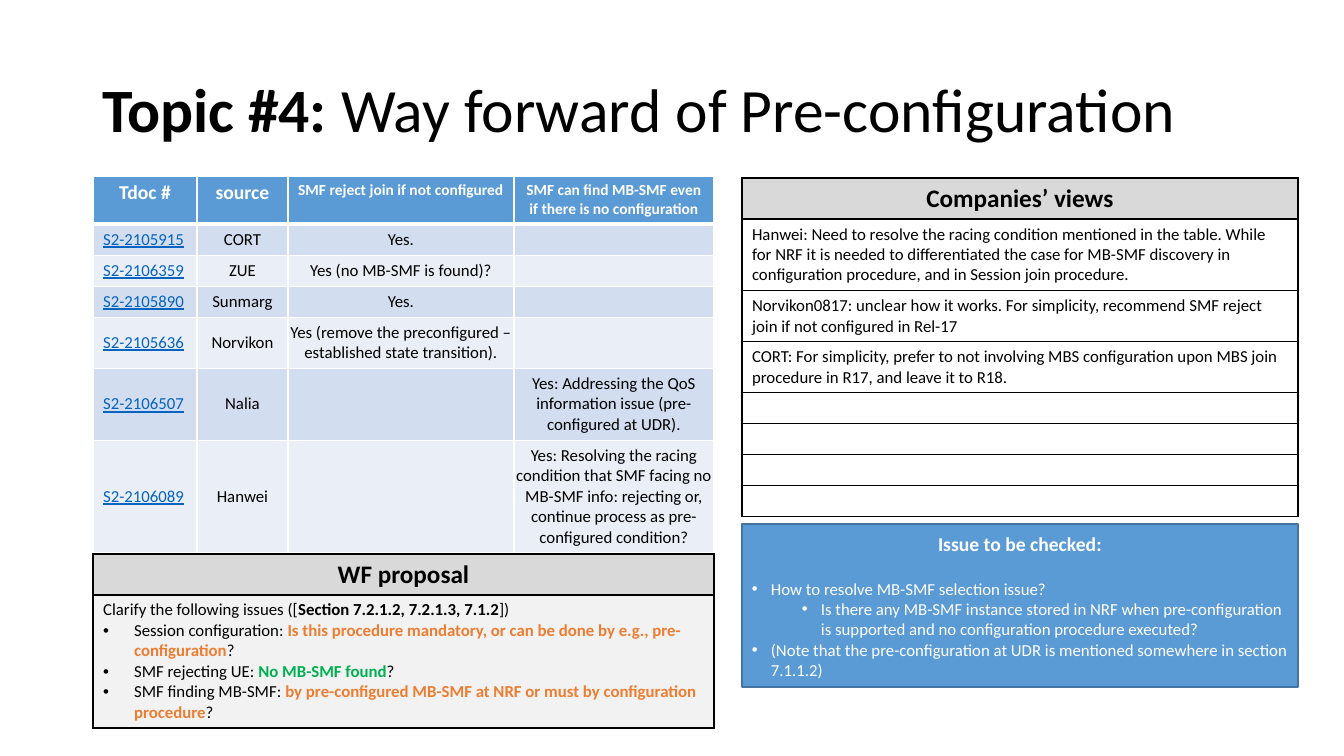
"""Build the slide on the way forward for pre-configuration."""
from lxml.etree import SubElement
from pptx import Presentation
from pptx.dml.color import RGBColor
from pptx.enum.shapes import MSO_SHAPE
from pptx.enum.text import MSO_ANCHOR as ANCHOR, PP_ALIGN as ALIGN
from pptx.oxml.ns import qn
from pptx.util import Pt

PX = 9072
rgb = RGBColor.from_string
BLUE, GREY, BLACK, WHITE = "5B9BD5", "D9D9D9", "000000", "FFFFFF"
ORANGE, GREEN, LINK = "ED7D31", "00B050", "0563C1"


def write(tf, *parts, size=12, color=BLACK, bold=False, underline=None,
          align=ALIGN.LEFT, indent=0, hang=0):
    """Add a paragraph; a part is a string or (string, colour, bold)."""
    p = tf.add_paragraph() if tf.text else tf.paragraphs[0]
    p.alignment = align
    if indent:
        pPr = p._p.get_or_add_pPr()
        pPr.set("marL", str(indent * PX))
        pPr.set("indent", str(-hang * PX))
        SubElement(pPr, qn("a:buFont")).set("typeface", "Arial")
        SubElement(pPr, qn("a:buChar")).set("char", "•")
    for part in parts:
        text, hue, heavy = (part, color, bold) if isinstance(part, str) else part
        r = p.add_run()
        r.text = text
        r.font.name, r.font.size = "Calibri", Pt(size)
        r.font.bold, r.font.underline = heavy, underline
        r.font.color.rgb = rgb(hue)
    return p


def draw_table(left, top, widths, heights, edge):
    """Add an unfilled table with ruled cells."""
    table = s.shapes.add_table(len(heights), len(widths), left * PX, top * PX,
                               sum(widths) * PX, sum(heights) * PX).table
    table.horz_banding = False
    for col, width in zip(table.columns, widths):
        col.width = width * PX
    for row, height in zip(table.rows, heights):
        row.height = height * PX
    for cell in table.iter_cells():
        tcPr = cell._tc.get_or_add_tcPr()
        for side in ("lnL", "lnR", "lnT", "lnB"):
            ln = SubElement(tcPr, qn(f"a:{side}"), w=str(Pt(1)))
            fill = SubElement(ln, qn("a:solidFill"))
            SubElement(fill, qn("a:srgbClr"), val=edge)
        cell.fill.background()
        cell.text_frame.paragraphs[0]._p.get_or_add_endParaRPr().set("sz", "1200")
    return table


prs = Presentation()
prs.slide_width, prs.slide_height = 1344 * PX, 756 * PX
s = prs.slides.add_slide(prs.slide_layouts[5])

title = s.shapes.title
title.left, title.top, title.width, title.height = 92 * PX, 40 * PX, 1159 * PX, 146 * PX
title.text_frame.vertical_anchor = ANCHOR.MIDDLE
p = write(title.text_frame, ("Topic #4: ", BLACK, True),
          "Way forward of Pre-configuration", size=44)
p.line_spacing = 0.9

headings = [("Tdoc #", 14), ("source", 14), ("SMF reject join if not configured", 11),
            ("SMF can find MB-SMF even if there is no configuration", 11)]
tdocs = [
    ("S2-2105915", "CORT", "Yes.", ""),
    ("S2-2106359", "ZUE", "Yes (no MB-SMF is found)?", ""),
    ("S2-2105890", "Sunmarg", "Yes.", ""),
    ("S2-2105636", "Norvikon",
     "Yes (remove the preconfigured – established state transition).", ""),
    ("S2-2106507", "Nalia", "",
     "Yes: Addressing the QoS information issue (pre-configured at UDR)."),
    ("S2-2106089", "Hanwei", "",
     "Yes: Resolving the racing condition that SMF facing no MB-SMF info: "
     "rejecting or, continue process as pre-configured condition?"),
]
table = draw_table(93, 176, [104, 91, 226, 200], [47, 31, 31, 31, 50, 72, 112], WHITE)
for c, (text, size) in enumerate(headings):
    cell = table.cell(0, c)
    cell.fill.solid()
    cell.fill.fore_color.rgb = rgb(BLUE)
    cell._tc.tcPr.find(qn("a:lnB")).set("w", str(Pt(3)))
    table.cell(1, c)._tc.tcPr.find(qn("a:lnT")).set("w", str(Pt(3)))
    write(cell.text_frame, text, size=size, color=WHITE, bold=True, align=ALIGN.CENTER)
for i, tdoc in enumerate(tdocs, 1):
    for c, text in enumerate(tdoc):
        cell = table.cell(i, c)
        cell.fill.solid()
        cell.fill.fore_color.rgb = rgb("D2DEEF" if i % 2 else "EAEFF7")
        cell.vertical_anchor = ANCHOR.MIDDLE
        if c:
            cell.margin_left = cell.margin_right = PX if c == 1 else 0
        if c == 1:
            cell.margin_top = cell.margin_bottom = PX
        if c == 0:
            write(cell.text_frame, text, color=LINK, underline=True)
        elif text:
            write(cell.text_frame, text, align=ALIGN.CENTER)

views = [
    "Hanwei: Need to resolve the racing condition mentioned in the table. While for NRF "
    "it is needed to differentiated the case for MB-SMF discovery in configuration "
    "procedure, and in Session join procedure.",
    "Norvikon0817: unclear how it works. For simplicity, recommend SMF reject join if "
    "not configured in Rel-17",
    "CORT: For simplicity, prefer to not involving MBS configuration upon MBS join "
    "procedure in R17, and leave it to R18.",
]
views_table = draw_table(742, 178, [556], [41, 71, 51, 51, 31, 31, 31, 31], BLACK)
for i, view in enumerate(views, 1):
    write(views_table.cell(i, 0).text_frame, view)

proposal_table = draw_table(93, 554, [621], [41, 133], BLACK)
for table, heading in ((views_table, "Companies’ views"), (proposal_table, "WF proposal")):
    cell = table.cell(0, 0)
    cell.fill.solid()
    cell.fill.fore_color.rgb = rgb(GREY)
    write(cell.text_frame, heading, size=18, bold=True, align=ALIGN.CENTER)

issues = [
    ("Session configuration: ",
     "Is this procedure mandatory, or can be done by e.g., pre-configuration", ORANGE),
    ("SMF rejecting UE: ", "No MB-SMF found", GREEN),
    ("SMF finding MB-SMF: ",
     "by pre-configured MB-SMF at NRF or must by configuration procedure", ORANGE),
]
cell = proposal_table.cell(1, 0)
cell.fill.solid()
cell.fill.fore_color.rgb = rgb("F2F2F2")
write(cell.text_frame, "Clarify the following issues ([",
      ("Section 7.2.1.2, 7.2.1.3, 7.1.2", BLACK, True), "])")
for topic, question, hue in issues:
    write(cell.text_frame, topic, (question, hue, True), "?", indent=31, hang=31)

checks = [
    ("How to resolve MB-SMF selection issue?", 0),
    ("Is there any MB-SMF instance stored in NRF when pre-configuration is supported "
     "and no configuration procedure executed?", 1),
    ("(Note that the pre-configuration at UDR is mentioned somewhere in section 7.1.1.2)", 0),
]
sp = s.shapes.add_shape(MSO_SHAPE.RECTANGLE, 742 * PX, 524 * PX, 556 * PX, 163 * PX)
sp.shadow.inherit = False
sp.fill.solid()
sp.fill.fore_color.rgb = rgb(BLUE)
sp.line.color.rgb = rgb("43739E")
sp.line.width = Pt(1)
tf = sp.text_frame
tf.word_wrap = True
tf.vertical_anchor = ANCHOR.MIDDLE
p = write(tf, "Issue to be checked:", size=14, color=WHITE, bold=True, align=ALIGN.CENTER)
p.space_after = Pt(17)
for text, level in checks:
    p = write(tf, text, color=WHITE, indent=19 + 50 * level, hang=19)
    p.level = level

prs.save("out.pptx")
